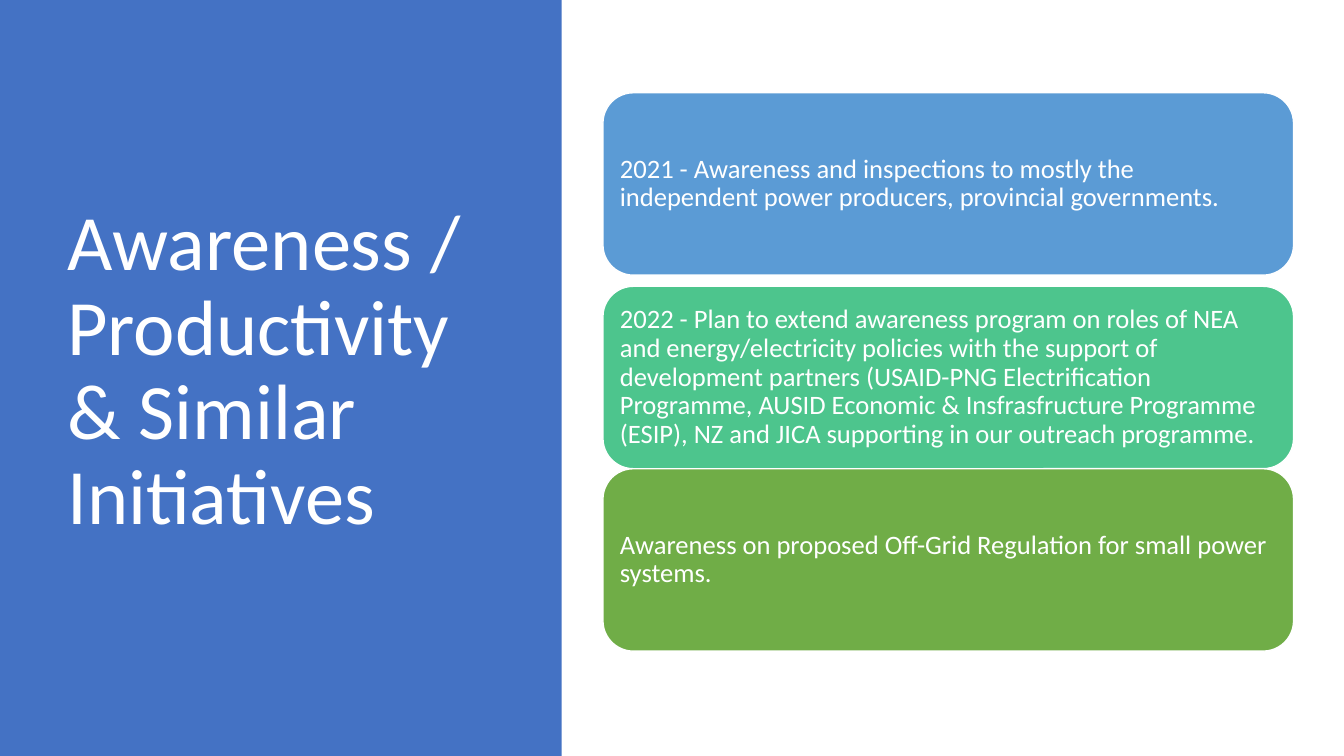
"""Build the awareness and productivity initiatives slide."""
from pptx import Presentation
from pptx import util as u
from pptx.dml.color import RGBColor
from pptx.enum import shapes, text

WHITE = RGBColor(0xFF, 0xFF, 0xFF)
PANEL_BLUE = RGBColor(0x44, 0x72, 0xC4)
SKY_BLUE = RGBColor(0x5B, 0x9B, 0xD5)
TEAL = RGBColor(0x4D, 0xC5, 0x8D)
GREEN = RGBColor(0x70, 0xAD, 0x47)

TITLE = "Awareness / Productivity & Similar Initiatives"
INITIATIVES = [
    (0.92, SKY_BLUE,
     "2021 - Awareness and inspections to mostly the independent power "
     "producers, provincial governments."),
    (2.84, TEAL,
     "2022 - Plan to extend awareness program on roles of NEA and "
     "energy/electricity policies with the support of development partners "
     "(USAID-PNG Electrification Programme, AUSID Economic & Insfrasfructure "
     "Programme (ESIP), NZ and JICA supporting in our outreach programme."),
    (4.65, GREEN,
     "Awareness on proposed Off-Grid Regulation for small power systems."),
]
CARD_LEFT, CARD_WIDTH, CARD_HEIGHT = 5.98, 6.85, 1.81
CARD_INSET = u.Inches(0.08)
CARD_FRAME = {"margin_left": CARD_INSET, "margin_right": CARD_INSET,
              "margin_top": CARD_INSET, "margin_bottom": CARD_INSET}
FRAME = {"word_wrap": True, "vertical_anchor": text.MSO_ANCHOR.MIDDLE}
PARAGRAPH = {"alignment": text.PP_ALIGN.LEFT, "line_spacing": 0.9}


def apply(target, values):
    for name, value in values.items():
        setattr(target, name, value)


def write(box, wording, size, frame_values):
    frame = box.text_frame
    apply(frame, frame_values)
    para = frame.paragraphs[0]
    apply(para, PARAGRAPH)
    span = para.add_run()
    span.text = wording
    apply(span.font, {"name": "Calibri", "size": u.Pt(size)})
    span.font.color.rgb = WHITE


def add_block(page, kind, place, color):
    block = page.shapes.add_shape(kind, *map(u.Inches, place))
    block.shadow.inherit = False
    block.fill.solid()
    block.fill.fore_color.rgb = color
    return block


def main():
    deck = Presentation()
    apply(deck, {"slide_width": u.Inches(13.33), "slide_height": u.Inches(7.5)})
    page = deck.slides.add_slide(deck.slide_layouts[6])

    panel = add_block(page, shapes.MSO_SHAPE.RECTANGLE, (0, 0, 5.57, 7.5), PANEL_BLUE)
    panel.line.fill.background()
    title = page.shapes.add_textbox(*map(u.Inches, (0.57, 0.68, 4.16, 6.02)))
    write(title, TITLE, 56, FRAME)

    for top, color, wording in INITIATIVES:
        place = (CARD_LEFT, top, CARD_WIDTH, CARD_HEIGHT)
        card = add_block(page, shapes.MSO_SHAPE.ROUNDED_RECTANGLE, place, color)
        card.line.color.rgb = WHITE
        card.line.width = u.Pt(1)
        write(card, wording, 19, {**FRAME, **CARD_FRAME})

    deck.save("out.pptx")


if __name__ == "__main__":
    main()
